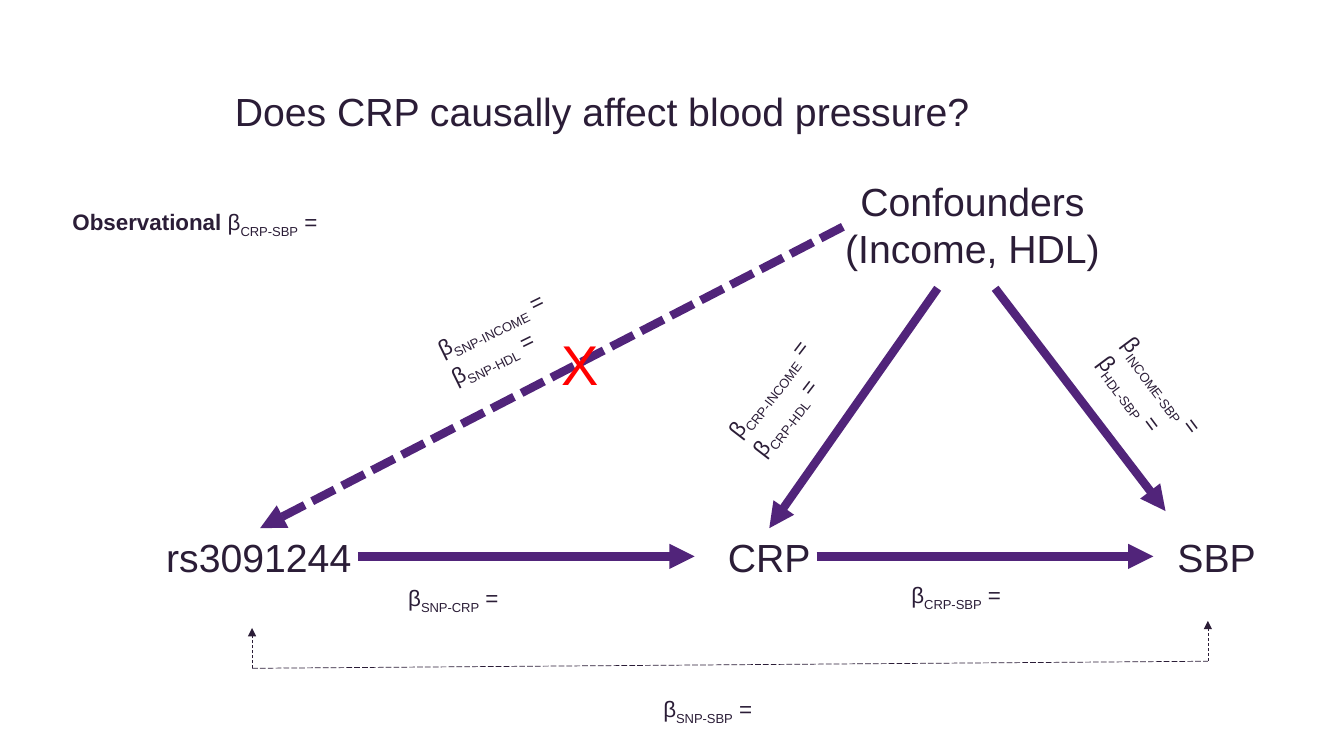
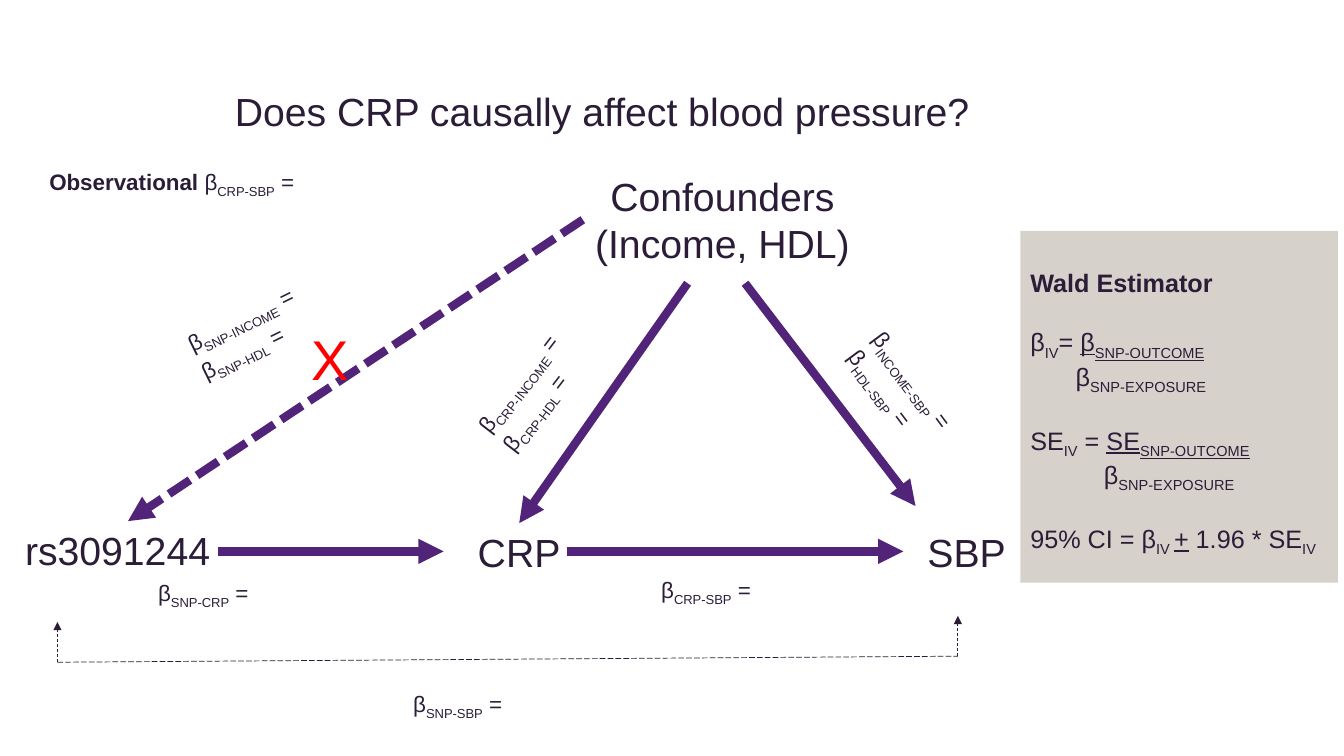
from dataclasses import dataclass

from lxml import etree
from pptx import Presentation
from pptx.dml.color import RGBColor
from pptx.enum.dml import MSO_LINE
from pptx.enum.shapes import MSO_CONNECTOR, MSO_SHAPE
from pptx.enum.text import MSO_ANCHOR, MSO_AUTO_SIZE, PP_ALIGN
from pptx.oxml.ns import qn
from pptx.util import Inches, Pt

STRAIGHT = MSO_CONNECTOR.STRAIGHT
RECTANGLE = MSO_SHAPE.RECTANGLE
DASH, LONG_DASH, SHORT_DASH = MSO_LINE.DASH, MSO_LINE.LONG_DASH, MSO_LINE.SQUARE_DOT
TOP = MSO_ANCHOR.TOP
LEFT, CENTER = PP_ALIGN.LEFT, PP_ALIGN.CENTER
FIT_SHAPE, NO_FIT = MSO_AUTO_SIZE.SHAPE_TO_FIT_TEXT, MSO_AUTO_SIZE.NONE

SUB, BOLD, UNDERLINE = "s", "b", "u"


@dataclass(frozen=True)
class Theme:
    font: str = "Arial"
    ink: RGBColor = RGBColor(0x2B, 0x1D, 0x37)
    purple: RGBColor = RGBColor(0x51, 0x24, 0x7A)
    red: RGBColor = RGBColor(0xFF, 0x00, 0x00)
    stone: RGBColor = RGBColor(0xD7, 0xD1, 0xCC)
    heading: int = 28
    effect: int = 16
    formula: int = 18
    cross: int = 40
    thick: float = 6
    thin: float = 0.5


@dataclass(frozen=True)
class GraphPlacement:
    shift: tuple
    observational: tuple
    snp: tuple
    snp_arrow: tuple
    blocked_path: tuple
    bracket_left: tuple


def plain(text):
    return [(text, "")]


def beta(pair):
    return [("β", ""), (pair, SUB), (" =", "")]


class Deck:
    def __init__(self, theme):
        self.theme = theme
        self.prs = Presentation()
        self.prs.slide_width = Inches(13.33)
        self.prs.slide_height = Inches(7.5)
        self.slide = None
        self.shift = (0, 0)

    def start_slide(self, title):
        self.slide = self.prs.slides.add_slide(self.prs.slide_layouts[5])
        self.shift = (0, 0)
        heading = self.slide.shapes.title
        heading.left, heading.top = Inches(0.22), Inches(0.87)
        heading.width, heading.height = Inches(11.5), Inches(0.52)
        heading.text_frame.auto_size = NO_FIT
        paragraph = heading.text_frame.paragraphs[0]
        paragraph.line_spacing = 0.9
        self.fill_paragraph(paragraph, plain(title), self.theme.heading, align=CENTER)

    def place(self, x, y):
        return Inches(x + self.shift[0]), Inches(y + self.shift[1])

    def fill_paragraph(self, paragraph, runs, size, color=None, align=LEFT):
        paragraph.alignment = align
        paragraph.font.name = self.theme.font
        paragraph.font.size = Pt(size)
        paragraph.font.color.rgb = color or self.theme.ink
        for text, style in runs:
            run = paragraph.add_run()
            run.text = text
            if BOLD in style:
                run.font.bold = True
            if UNDERLINE in style:
                run.font.underline = True
            if SUB in style:
                run._r.get_or_add_rPr().set("baseline", "-25000")

    def label(self, box, lines, size, color=None, align=LEFT, rotation=0, wrap=False):
        x, y, width, height = box
        label = self.slide.shapes.add_textbox(*self.place(x, y), Inches(width), Inches(height))
        label.rotation = rotation
        frame = label.text_frame
        frame.word_wrap = wrap
        frame.auto_size = FIT_SHAPE
        for index, runs in enumerate(lines):
            paragraph = frame.add_paragraph() if index else frame.paragraphs[0]
            self.fill_paragraph(paragraph, runs, size, color, align)

    def node(self, box, *lines, align=LEFT):
        self.label(box, [plain(line) for line in lines], self.theme.heading, align=align)

    def effect(self, box, *pairs, rotation=0):
        self.label(box, [beta(pair) for pair in pairs], self.theme.effect, rotation=rotation)

    def line(self, start, end, color, width, dash=None, arrow=True):
        connector = self.slide.shapes.add_connector(STRAIGHT, *self.place(*start), *self.place(*end))
        connector.line.color.rgb = color
        connector.line.width = Pt(width)
        if dash is not None:
            connector.line.dash_style = dash
        if arrow:
            outline = connector.line._get_or_add_ln()
            etree.SubElement(outline, qn("a:tailEnd")).set("type", "triangle")
        etree.SubElement(connector._element.spPr, qn("a:effectLst"))

    def causal_arrow(self, start, end, dash=None):
        self.line(start, end, self.theme.purple, self.theme.thick, dash)

    def bracket(self, left, right, rise=0.4):
        color, width = self.theme.ink, self.theme.thin
        self.line(left, right, color, width, LONG_DASH, arrow=False)
        for x, y in (left, right):
            self.line((x, y), (x, y - rise), color, width, DASH)

    def formula_panel(self, box, rows):
        panel = self.slide.shapes.add_shape(RECTANGLE, *(Inches(length) for length in box))
        panel.shadow.inherit = False
        panel.fill.solid()
        panel.fill.fore_color.rgb = self.theme.stone
        panel.line.fill.background()
        frame = panel.text_frame
        frame.word_wrap = True
        frame.vertical_anchor = TOP
        frame.margin_top = Inches(0.36)
        for index, (runs, indent, gap) in enumerate(rows):
            paragraph = frame.add_paragraph() if index else frame.paragraphs[0]
            paragraph._p.get_or_add_pPr().set("marL", str(Inches(indent)))
            if gap:
                paragraph.space_before = Pt(gap)
            self.fill_paragraph(paragraph, runs, self.theme.formula)


def draw_causal_graph(deck, placement):
    theme = deck.theme
    deck.start_slide("Does CRP causally affect blood pressure?")

    observational = [("Observational ", BOLD)] + beta("CRP-SBP")
    deck.label((*placement.observational, 3.21, 0.37), [observational], theme.effect, wrap=True)
    deck.node((*placement.snp, 2.06, 0.57), "rs3091244")
    deck.causal_arrow(*placement.snp_arrow)
    deck.causal_arrow(*placement.blocked_path, dash=SHORT_DASH)

    deck.shift = placement.shift
    deck.node((7.12, 5.24, 1.03, 0.57), "CRP")
    deck.node((11.58, 5.24, 0.99, 0.57), "SBP")
    deck.node((8.21, 1.71, 2.87, 1.04), "Confounders", "(Income, HDL)", align=CENTER)
    deck.causal_arrow((8.1, 5.52), (11.44, 5.52))
    deck.causal_arrow((9.3, 2.86), (7.63, 5.24))
    deck.causal_arrow((9.87, 2.86), (11.56, 5.07))
    deck.label((5.47, 3.22, 0.49, 0.77), [plain("X")], theme.cross, theme.red)

    deck.effect((6.48, 6.85, 1.18, 0.37), "SNP-SBP")
    deck.effect((8.94, 5.72, 1.19, 0.37), "CRP-SBP")
    deck.effect((3.95, 5.75, 1.2, 0.37), "SNP-CRP")
    deck.effect((4.25, 2.99, 1.48, 0.64), "SNP-INCOME", "SNP-HDL", rotation=333.8)
    deck.effect((7.01, 3.53, 1.56, 0.64), "CRP-INCOME", "CRP-HDL", rotation=307.5)
    deck.effect((10.73, 3.64, 1.47, 0.64), "INCOME-SBP", "HDL-SBP", rotation=53.3)
    deck.bracket(placement.bracket_left, (11.98, 6.56))


def draw_wald_estimator(deck):
    gap = 21
    exposure = [("β", ""), ("SNP-EXPOSURE", SUB)]
    outcome = ("SNP-OUTCOME", SUB + UNDERLINE)
    interval = [("95% CI = β", ""), ("IV ", SUB), ("+", UNDERLINE), (" 1.96 * SE", ""), ("IV", SUB)]
    deck.formula_panel((10.12, 2.29, 3.15, 3.49), [
        ([("Wald Estimator", BOLD)], 0, 0),
        ([("β", ""), ("IV", SUB), ("= ", ""), ("β", UNDERLINE), outcome], 0, gap),
        (exposure, 0.45, 0),
        ([("SE", ""), ("IV", SUB), (" = ", ""), ("SE", UNDERLINE), outcome], 0, gap),
        (exposure, 0.73, 0),
        (interval, 0, gap),
    ])


def main():
    deck = Deck(Theme())
    draw_causal_graph(deck, GraphPlacement(
        shift=(0, 0),
        observational=(0.62, 2.02),
        snp=(1.55, 5.24),
        snp_arrow=((3.55, 5.52), (6.89, 5.52)),
        blocked_path=((8.36, 2.25), (2.58, 5.24)),
        bracket_left=(2.5, 6.63),
    ))
    draw_causal_graph(deck, GraphPlacement(
        shift=(-2.48, -0.05),
        observational=(0.39, 1.62),
        snp=(0.15, 5.17),
        snp_arrow=((2.16, 5.47), (4.4, 5.47)),
        blocked_path=((5.78, 2.18), (1.27, 5.17)),
        bracket_left=(3.05, 6.62),
    ))
    draw_wald_estimator(deck)
    deck.prs.save("out.pptx")


if __name__ == "__main__":
    main()
